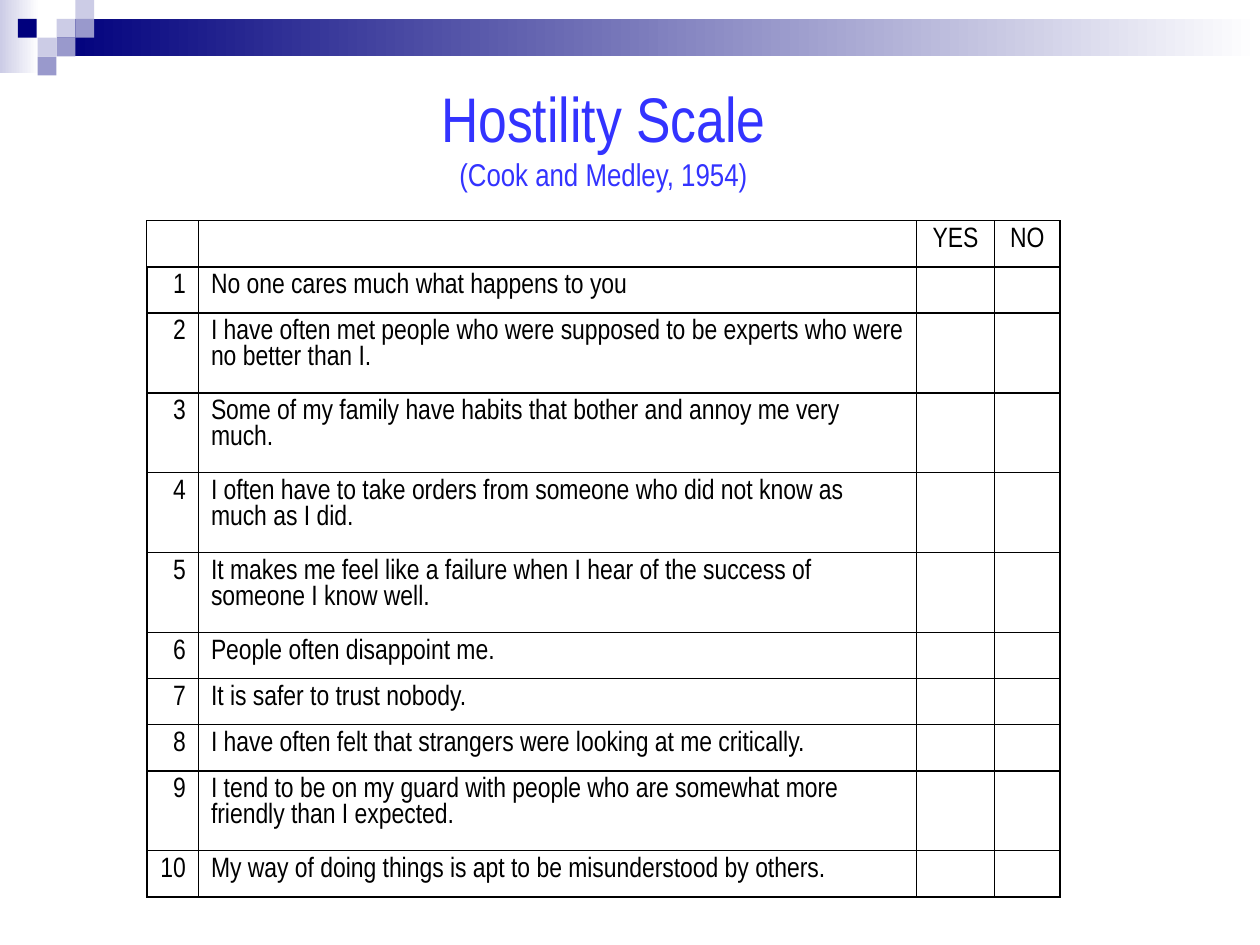
from dataclasses import dataclass

import pptx
import pptx.dml.color
import pptx.enum.shapes
import pptx.enum.text
import pptx.oxml
import pptx.oxml.ns
import pptx.util
from lxml import etree

Cm = pptx.util.Cm
Pt = pptx.util.Pt
Align = pptx.enum.text.PP_ALIGN


@dataclass(frozen=True)
class Theme:
    font: str = "Arial Narrow"
    navy: str = "00007D"
    lilac: str = "9999CC"
    pale: str = "CCCCE6"
    white: str = "FFFFFF"
    title: str = "3333FF"
    ink: str = "000000"
    head: int = 36
    sub: int = 18
    body: int = 16
    rule: float = 1
    thin: float = 0.75


@dataclass(frozen=True)
class Block:
    left: float
    top: float
    width: float
    height: float
    color: str
    fade: str = ""


@dataclass(frozen=True)
class Item:
    text: str
    lines: int = 1


LOOK = Theme()
UNIT = 0.38  # side of a corner square, cm
STEPS = (0.36, 0.76, 1.14, 1.52)  # left edges of the squares, cm
SQUARES = (
    (2, 1, LOOK.pale), (3, 0, LOOK.pale), (3, 1, LOOK.lilac), (1, 2, LOOK.pale),
    (0, 1, LOOK.navy), (2, 2, LOOK.lilac), (1, 3, LOOK.lilac),
)
BLOCKS = [
    Block(0, 0, 0.79, 1.47, LOOK.pale, LOOK.white),
    Block(1.14, UNIT, 24.26, 0.76, LOOK.navy, LOOK.white),
] + [Block(STEPS[col], row * UNIT, UNIT, UNIT, color) for col, row, color in SQUARES]

ITEMS = (
    Item("No one cares much what happens to you"),
    Item("I have often met people who were supposed to be experts who were no better than I.", 2),
    Item("Some of my family have habits that bother and annoy me very much.", 2),
    Item("I often have to take orders from someone who did not know as much as I did.", 2),
    Item("It makes me feel like a failure when I hear of the success of someone I know well.", 2),
    Item("People often disappoint me."),
    Item("It is safer to trust nobody."),
    Item("I have often felt that strangers were looking at me critically."),
    Item("I tend to be on my guard with people who are somewhat more friendly than I expected.", 2),
    Item("My way of doing things is apt to be misunderstood by others."),
)
WIDTHS = (1.04, 14.48, 1.57, 1.32)
HEIGHTS = {1: 0.93, 2: 1.61}  # row height by line count
ALIGNS = (Align.RIGHT, Align.LEFT, Align.CENTER, Align.CENTER)


def rgb(code: str):
    return pptx.dml.color.RGBColor.from_string(code)


def write(para, text: str, *, size: int, color: str, align) -> None:
    para.alignment = align
    if text:
        run = para.add_run()
        run.text = text
        run.font.name = LOOK.font
        run.font.size = Pt(size)
        run.font.color.rgb = rgb(color)
    else:  # keeps a blank cell as low as a filled one
        end = etree.SubElement(para._p, pptx.oxml.ns.qn("a:endParaRPr"))
        end.set("sz", str(size * 100))
        face = etree.SubElement(end, pptx.oxml.ns.qn("a:latin"))
        face.set("typeface", LOOK.font)


def draw_block(slide, block: Block) -> None:
    shape = slide.shapes.add_shape(
        pptx.enum.shapes.MSO_SHAPE.RECTANGLE,
        Cm(block.left), Cm(block.top), Cm(block.width), Cm(block.height))
    shape.shadow.inherit = False
    shape.line.fill.background()
    if block.fade:
        shape.fill.gradient()
        shape.fill.gradient_angle = 0
        for stop, color in zip(shape.fill.gradient_stops, (block.color, block.fade)):
            stop.color.rgb = rgb(color)
    else:
        shape.fill.solid()
        shape.fill.fore_color.rgb = rgb(block.color)


def draw_title(slide) -> None:
    box = slide.shapes.add_textbox(Cm(2.74), Cm(1.47), Cm(18.85), Cm(2.54))
    frame = box.text_frame
    frame.word_wrap = True
    frame.vertical_anchor = pptx.enum.text.MSO_ANCHOR.BOTTOM
    form = {"color": LOOK.title, "align": Align.CENTER}
    write(frame.paragraphs[0], "Hostility Scale", size=LOOK.head, **form)
    write(frame.add_paragraph(), "(Cook and Medley, 1954)", size=LOOK.sub, **form)


def add_edges(cell, row: int, col: int) -> None:
    thin = {(0, "R"), (1, "L")}  # divider between number and statement
    if row == 0:
        thin |= {(0, "L"), (0, "T"), (1, "T")}
    props = cell._tc.get_or_add_tcPr()
    for spot, side in enumerate("LRTB"):
        width = LOOK.thin if (col, side) in thin else LOOK.rule
        edge = pptx.oxml.parse_xml(
            f'<a:ln{side} {pptx.oxml.ns.nsdecls("a")} w="{Pt(width)}">'
            f'<a:solidFill><a:srgbClr val="{LOOK.ink}"/></a:solidFill></a:ln{side}>')
        props.insert(spot, edge)


def draw_table(slide) -> None:
    rows = [("", "", "YES", "NO")]
    rows += [(str(num), item.text, "", "") for num, item in enumerate(ITEMS, 1)]
    highs = [HEIGHTS[1]] + [HEIGHTS[item.lines] for item in ITEMS]
    table = slide.shapes.add_table(
        len(rows), len(WIDTHS), Cm(2.96), Cm(4.45), Cm(sum(WIDTHS)), Cm(sum(highs))).table
    table.first_row = False
    table.horz_banding = False
    for col, width in zip(table.columns, WIDTHS):
        col.width = Cm(width)
    for r, (words, high) in enumerate(zip(rows, highs)):
        table.rows[r].height = Cm(high)
        for c, text in enumerate(words):
            cell = table.cell(r, c)
            cell.fill.background()
            write(cell.text_frame.paragraphs[0], text, size=LOOK.body,
                  color=LOOK.ink, align=ALIGNS[c])
            add_edges(cell, r, c)


def main() -> None:
    deck = pptx.Presentation()
    deck.slide_width, deck.slide_height = Cm(25.4), Cm(19.05)
    slide = deck.slides.add_slide(deck.slide_layouts[6])
    # Corner squares and fading bars
    for block in BLOCKS:
        draw_block(slide, block)
    # Questionnaire
    draw_table(slide)
    # Heading
    draw_title(slide)
    deck.save("out.pptx")


if __name__ == "__main__":
    main()
